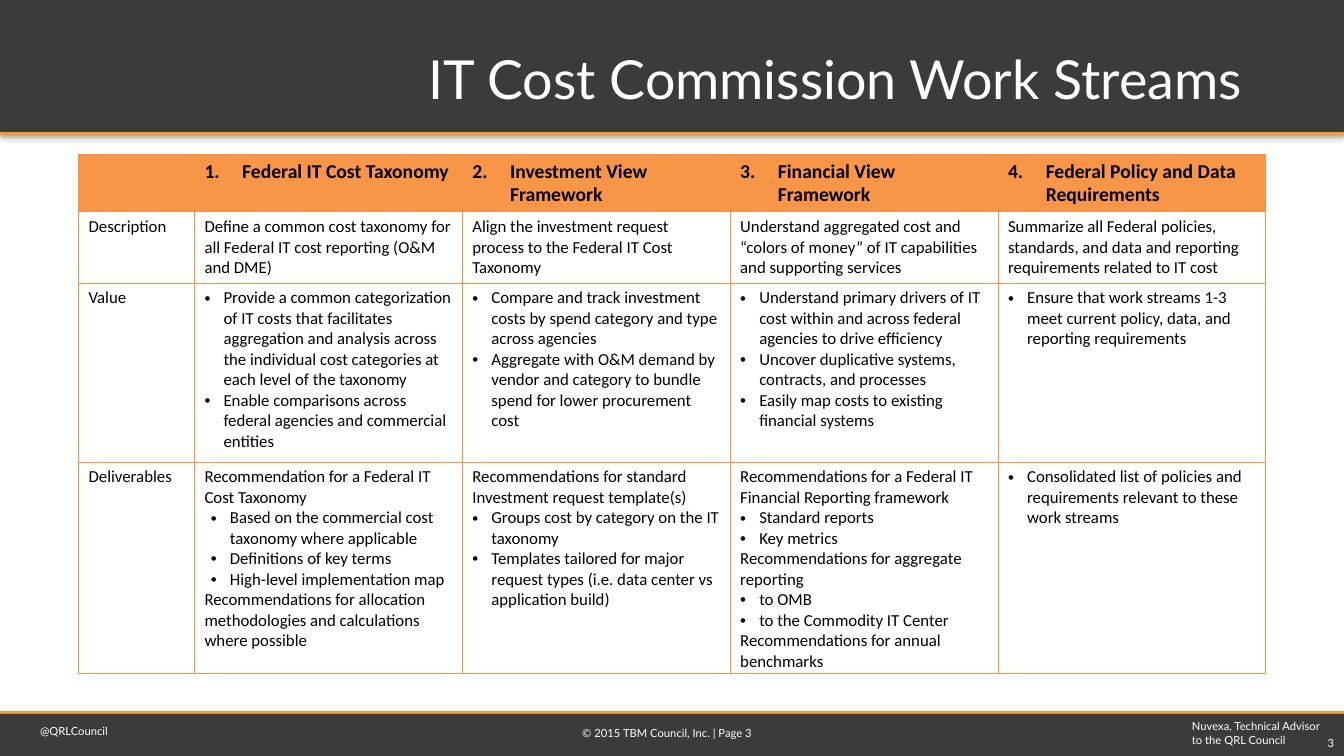
from lxml.etree import SubElement
from pptx import Presentation
from pptx.dml.color import RGBColor
from pptx.enum.shapes import MSO_SHAPE
from pptx.enum.text import MSO_ANCHOR, MSO_AUTO_SIZE, PP_ALIGN
from pptx.oxml.ns import qn
from pptx.util import Cm, Pt

CHARCOAL = RGBColor(0x3B, 0x3B, 0x3B)
ORANGE = RGBColor(0xF7, 0x98, 0x37)
HEADER_ORANGE = RGBColor(0xF7, 0x96, 0x46)
BORDER_ORANGE = RGBColor(0xF6, 0x92, 0x40)
WHITE = RGBColor(0xFF, 0xFF, 0xFF)
BLACK = RGBColor(0x00, 0x00, 0x00)
PAGE_WIDTH, PAGE_HEIGHT = 33.87, 19.05


def bullets(*texts, indent=0.48):
    return [(text, indent) for text in texts]


HEADINGS = ["Federal IT Cost Taxonomy", "Investment View Framework",
            "Financial View Framework", "Federal Policy and Data Requirements"]
ROWS = [
    ("Description", [
        ["Define a common cost taxonomy for all Federal IT cost reporting (O&M and DME)"],
        ["Align the investment request process to the Federal IT Cost Taxonomy"],
        ["Understand aggregated cost and “colors of money” of IT capabilities and supporting services"],
        ["Summarize all Federal policies, standards, and data and reporting requirements related to IT cost"],
    ]),
    ("Value", [
        bullets("Provide a common categorization of IT costs that facilitates aggregation and analysis "
                "across the individual cost categories at each level of the taxonomy",
                "Enable comparisons across federal agencies and commercial entities"),
        bullets("Compare and track investment costs by spend category and type across agencies",
                "Aggregate with O&M demand by vendor and category to bundle spend for lower procurement cost"),
        bullets("Understand primary drivers of IT cost within and across federal agencies to drive efficiency",
                "Uncover duplicative systems, contracts, and processes",
                "Easily map costs to existing financial systems"),
        bullets("Ensure that work streams 1-3 meet current policy, data, and reporting requirements"),
    ]),
    ("Deliverables", [
        ["Recommendation for a Federal IT Cost Taxonomy",
         *bullets("Based on the commercial cost taxonomy where applicable",
                  "Definitions of key terms", "High-level implementation map", indent=0.64),
         "Recommendations for allocation methodologies and calculations where possible"],
        ["Recommendations for standard Investment request template(s)",
         *bullets("Groups cost by category on the IT taxonomy",
                  "Templates tailored for major request types (i.e. data center vs application build)")],
        ["Recommendations for a Federal IT Financial Reporting framework",
         *bullets("Standard reports", "Key metrics"),
         "Recommendations for aggregate reporting",
         *bullets("to OMB", "to the Commodity IT Center"),
         "Recommendations for annual benchmarks"],
        bullets("Consolidated list of policies and requirements relevant to these work streams"),
    ]),
]


def write(para, text, font="Calibri", size=12, color=BLACK, bold=False, align=PP_ALIGN.LEFT,
          indent=None, hanging=0.48, number=None):
    para.alignment = align
    if indent is not None:
        properties = para._p.get_or_add_pPr()
        properties.set("marL", str(Cm(indent)))
        properties.set("indent", str(-Cm(hanging)))
        if number:
            SubElement(properties, qn("a:buFont"), typeface="+mj-lt")
            SubElement(properties, qn("a:buAutoNum"), type="arabicPeriod", startAt=str(number))
        else:
            SubElement(properties, qn("a:buFont"), typeface="Arial")
            SubElement(properties, qn("a:buChar"), char="•")
    span = para.add_run()
    span.text = text
    span.font.name = font
    span.font.size = Pt(size)
    span.font.bold = bold
    span.font.color.rgb = color


class SlideBuilder:
    """Draws styled elements on the current slide."""

    def __init__(self, deck):
        self.page = deck.slides.add_slide(deck.slide_layouts[5])
        self.font = "Lato"

    def bar(self, top, height, color):
        shape = self.page.shapes.add_shape(MSO_SHAPE.RECTANGLE, 0, Cm(top), Cm(PAGE_WIDTH), Cm(height))
        shape.fill.solid()
        shape.fill.fore_color.rgb = color
        shape.line.fill.background()
        shape.shadow.inherit = False
        effects = shape._element.spPr.find(qn("a:effectLst"))
        shadow = SubElement(effects, qn("a:outerShdw"), blurRad=str(Pt(3.1)), dist=str(Pt(1.8)),
                            dir="5400000", rotWithShape="0")
        tint = SubElement(shadow, qn("a:srgbClr"), val=str(BLACK))
        SubElement(tint, qn("a:alpha"), val="35000")

    def label(self, left, top, width, height, *lines, align=PP_ALIGN.LEFT):
        box = self.page.shapes.add_textbox(Cm(left), Cm(top), Cm(width), Cm(height))
        frame = box.text_frame
        frame.word_wrap = True
        for index, line in enumerate(lines):
            para = frame.add_paragraph() if index else frame.paragraphs[0]
            write(para, line, font=self.font, size=8, color=WHITE, align=align)

    def title(self, text):
        box = self.page.shapes.title
        box.left, box.top, box.width, box.height = Cm(2.34), Cm(1.02), Cm(29.21), Cm(1.88)
        frame = box.text_frame
        frame.auto_size = MSO_AUTO_SIZE.NONE
        frame.vertical_anchor = MSO_ANCHOR.MIDDLE
        write(frame.paragraphs[0], text, font=self.font, size=38.4, color=WHITE, align=PP_ALIGN.RIGHT)
        box._element.getparent().append(box._element)

    def cell(self, cell, paragraphs, fill=WHITE, **style):
        properties = cell._tc.get_or_add_tcPr()
        for side in ("a:lnL", "a:lnR", "a:lnT", "a:lnB"):
            line = SubElement(properties, qn(side), w=str(Pt(0.75)))
            SubElement(SubElement(line, qn("a:solidFill")), qn("a:srgbClr"), val=str(BORDER_ORANGE))
        cell.fill.solid()
        cell.fill.fore_color.rgb = fill
        frame = cell.text_frame
        for index, item in enumerate(paragraphs):
            para = frame.add_paragraph() if index else frame.paragraphs[0]
            text, indent = (item, None) if isinstance(item, str) else item
            write(para, text, indent=indent, **style)

    def table(self, left, top, widths, heights):
        table = self.page.shapes.add_table(len(heights), len(widths), Cm(left), Cm(top),
                                           Cm(sum(widths)), Cm(sum(heights))).table
        table.horz_banding = False
        for column, width in zip(table.columns, widths):
            column.width = Cm(width)
        for row, height in zip(table.rows, heights):
            row.height = Cm(height)
        self.cell(table.cell(0, 0), [], fill=HEADER_ORANGE)
        for number, heading in enumerate(HEADINGS, 1):
            self.cell(table.cell(0, number), [(heading, 0.95)], fill=HEADER_ORANGE,
                      size=14, bold=True, hanging=0.95, number=number)
        for row, (name, contents) in enumerate(ROWS, 1):
            for column, paragraphs in enumerate([[name], *contents]):
                self.cell(table.cell(row, column), paragraphs)


def main():
    deck = Presentation()
    deck.slide_width, deck.slide_height = Cm(PAGE_WIDTH), Cm(PAGE_HEIGHT)
    builder = SlideBuilder(deck)
    builder.bar(0, 3.33, CHARCOAL)
    builder.bar(3.33, 0.08, ORANGE)
    builder.bar(17.92, 0.08, ORANGE)
    builder.bar(17.99, 1.06, CHARCOAL)
    builder.label(0.76, 18.14, 3.96, 0.6, "@QRLCouncil")
    builder.label(29.79, 18.01, 3.91, 0.94, "Nuvexa, Technical Advisor", "to the QRL Council")
    builder.label(11.05, 18.19, 11.53, 0.6, "© 2015 TBM Council, Inc. | Page 3", align=PP_ALIGN.CENTER)
    builder.label(31.33, 18.44, 2.54, 0.6, "3", align=PP_ALIGN.RIGHT)
    builder.table(1.98, 3.89, [2.92] + [6.75] * 4, [1.43, 1.8, 4.51, 5.31])
    builder.title("IT Cost Commission Work Streams")
    deck.save("out.pptx")


if __name__ == "__main__":
    main()
